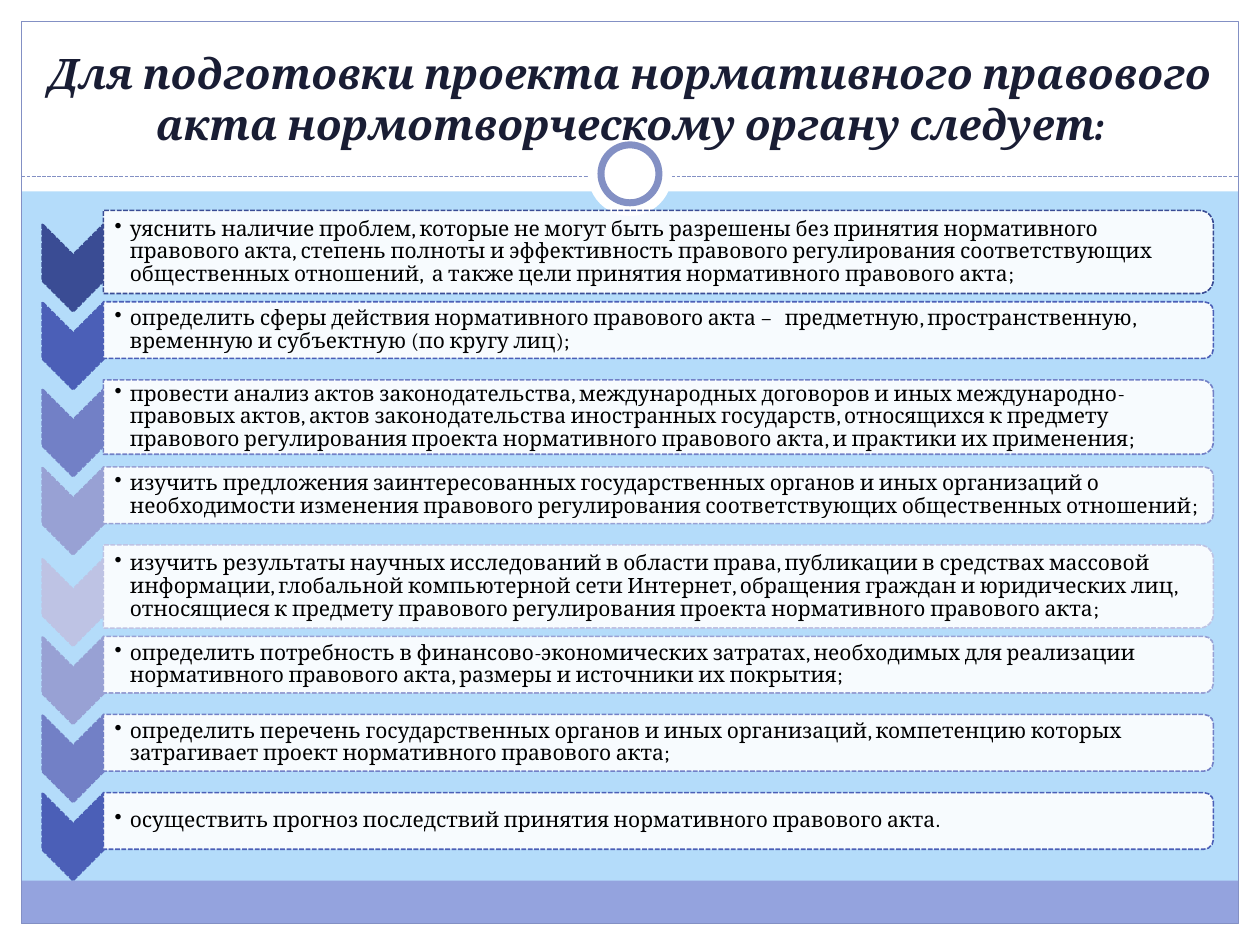
from lxml.etree import SubElement
from pptx import Presentation
from pptx.dml.color import RGBColor
from pptx.enum.dml import MSO_LINE
from pptx.enum.shapes import MSO_CONNECTOR, MSO_SHAPE as SHAPE
from pptx.enum.text import MSO_ANCHOR, PP_ALIGN
from pptx.oxml.ns import qn
from pptx.util import Inches, Pt

FONT = "Cambria"
WHITE, FRAME_BLUE = "FFFFFF", "8390C4"
WIDTH, HEIGHT, MARGIN = 10, 7.5, 0.17
HEADER = 1.52
RULE_Y = 1.4

# Step list grid
FIRST_TOP, PITCH, ROW = 1.67, 0.62, 0.45
BOX_LEFT, BOX_WIDTH = 0.82, 8.81
CHEVRON_LENGTH, CHEVRON_WIDTH = 0.7, 0.49
CHEVRON_CENTER = 0.58

steps = [
    (0.66, "3A4C94", "уяснить наличие проблем, которые не могут быть разрешены без принятия нормативного правового акта, степень полноты и эффективность правового регулирования соответствующих общественных отношений,  а также цели принятия нормативного правового акта;"),
    (ROW, "4B5FB7", "определить сферы действия нормативного правового акта –   предметную, пространственную, временную и субъектную (по кругу лиц);"),
    (0.59, "7280C6", "провести анализ актов законодательства, международных договоров и иных международно-правовых актов, актов законодательства иностранных государств, относящихся к предмету правового регулирования проекта нормативного правового акта, и практики их применения;"),
    (ROW, "98A1D4", "изучить предложения заинтересованных государственных органов и иных организаций о необходимости изменения правового регулирования соответствующих общественных отношений;"),
    (0.66, "BEC3E4", "изучить результаты научных исследований в области права, публикации в средствах массовой информации, глобальной компьютерной сети Интернет, обращения граждан и юридических лиц, относящиеся к предмету правового регулирования проекта нормативного правового акта;"),
    (ROW, "98A1D4", "определить потребность в финансово-экономических затратах, необходимых для реализации нормативного правового акта, размеры и источники их покрытия;"),
    (ROW, "7280C6", "определить перечень государственных органов и иных организаций, компетенцию которых затрагивает проект нормативного правового акта;"),
    (ROW, "4B5FB7", "осуществить прогноз последствий принятия нормативного правового акта."),
]


def color(value):
    return RGBColor.from_string(value)


def add_figure(shapes, kind, center, size, fill=None, line=None, weight=0.75, dash=None, rotation=0):
    """Add a preset shape around its center; size is taken before rotation."""
    (x, y), (width, height) = center, size
    figure = shapes.add_shape(kind, Inches(x - width / 2), Inches(y - height / 2),
                              Inches(width), Inches(height))
    figure.shadow.inherit = False
    figure.rotation = rotation
    if fill:
        figure.fill.solid()
        figure.fill.fore_color.rgb = color(fill)
    else:
        figure.fill.background()
    if line:
        figure.line.color.rgb = color(line)
        figure.line.width = Pt(weight)
        figure.line.dash_style = dash
    else:
        figure.line.fill.background()
    return figure


presentation = Presentation()
presentation.slide_width, presentation.slide_height = Inches(WIDTH), Inches(HEIGHT)
slide = presentation.slides.add_slide(presentation.slide_layouts[5])
slide.background.fill.solid()
slide.background.fill.fore_color.rgb = color("B4DCFA")
shapes = slide.shapes

# Frame: white margins, footer band, outline, dashed rule and ring
middle, center_y = WIDTH / 2, HEIGHT / 2
inner_width = WIDTH - 2 * MARGIN
for center, size, fill in [
    ((middle, HEIGHT - MARGIN / 2), (WIDTH, MARGIN), WHITE),
    ((middle, HEADER / 2), (WIDTH, HEADER), WHITE),
    ((MARGIN / 2, center_y), (MARGIN, HEIGHT), WHITE),
    ((WIDTH - MARGIN / 2, center_y), (MARGIN, HEIGHT), WHITE),
    ((middle, 7.16), (inner_width, 0.34), "94A3DE"),
]:
    add_figure(shapes, SHAPE.RECTANGLE, center, size, fill)
add_figure(shapes, SHAPE.RECTANGLE, (middle, center_y),
           (inner_width, HEIGHT - 2 * MARGIN), line=FRAME_BLUE)

rule = shapes.add_connector(MSO_CONNECTOR.STRAIGHT, Inches(MARGIN), Inches(RULE_Y),
                            Inches(WIDTH - MARGIN), Inches(RULE_Y))
rule.line.color.rgb = color(FRAME_BLUE)
rule.line.width = Pt(0.75)
rule.line.dash_style = MSO_LINE.SQUARE_DOT
SubElement(rule._element.spPr, qn("a:effectLst"))

ring_center = (middle, 1.38)
add_figure(shapes, SHAPE.OVAL, ring_center, (0.67, 0.67), WHITE)
add_figure(shapes, SHAPE.OVAL, ring_center, (0.46, 0.46), WHITE, FRAME_BLUE, 4)

# Title, brought in front of the frame
title = shapes.title
shapes._spTree.append(title._element)
title.left, title.top = 0, Inches(0.25)
title.width, title.height = Inches(WIDTH), Inches(0.98)
title.text_frame.text = "Для подготовки проекта нормативного правового акта нормотворческому органу следует:"
title.text_frame.vertical_anchor = MSO_ANCHOR.BOTTOM
paragraph = title.text_frame.paragraphs[0]
paragraph.alignment = PP_ALIGN.CENTER
paragraph.font.name, paragraph.font.size = FONT, Pt(24)
paragraph.font.bold = paragraph.font.italic = True
paragraph.font.color.rgb = color("191D34")

# Steps: a taller box pushes its chevron and the next row down by half the excess
step_shapes = shapes.add_group_shape().shapes
top = FIRST_TOP
for height, tone, text in steps:
    chevron_top = top + (height - ROW) / 2
    add_figure(step_shapes, SHAPE.CHEVRON, (CHEVRON_CENTER, chevron_top + CHEVRON_LENGTH / 2),
               (CHEVRON_LENGTH, CHEVRON_WIDTH), tone, tone, 0.9, MSO_LINE.SQUARE_DOT, 90)
    box = add_figure(step_shapes, SHAPE.ROUND_2_SAME_RECTANGLE,
                     (BOX_LEFT + BOX_WIDTH / 2, top + height / 2), (height, BOX_WIDTH),
                     WHITE, tone, 0.9, MSO_LINE.SQUARE_DOT, 90)
    fill_color = box._element.spPr.find(qn("a:solidFill"))[0]
    SubElement(fill_color, qn("a:alpha"), val="90000")

    label = step_shapes.add_textbox(Inches(BOX_LEFT), Inches(top + 0.03),
                                    Inches(BOX_WIDTH - 0.02), Inches(height - 0.06))
    frame = label.text_frame
    frame.word_wrap = True
    frame.vertical_anchor = MSO_ANCHOR.MIDDLE
    frame.margin_left = Inches(0.09)
    frame.margin_top = frame.margin_right = frame.margin_bottom = Inches(0.01)
    frame.text = text
    paragraph = frame.paragraphs[0]
    paragraph.line_spacing = 0.9
    paragraph.font.name, paragraph.font.size = FONT, Pt(12)
    paragraph.font.color.rgb = color("000000")
    properties = paragraph._p.get_or_add_pPr()
    properties.set("marL", str(Inches(0.12)))
    properties.set("indent", str(-Inches(0.12)))
    bullet = properties.makeelement(qn("a:buChar"), {"char": "•"})
    properties.find(qn("a:defRPr")).addprevious(bullet)
    top = chevron_top + PITCH

presentation.save("out.pptx")
